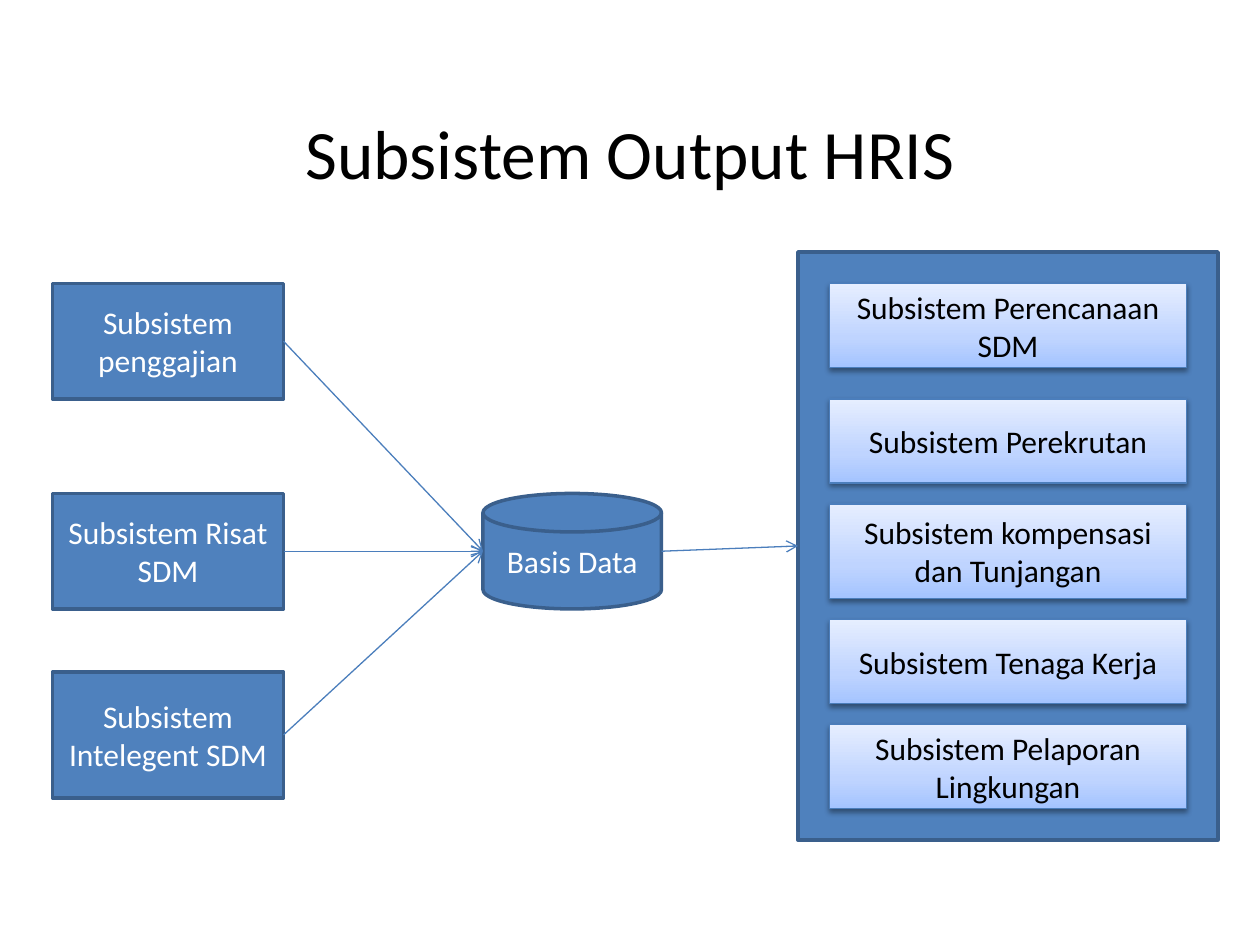
import pptx
import pptx.dml.color
import pptx.enum.dml
import pptx.enum.shapes
import pptx.enum.text
import pptx.oxml
import pptx.oxml.ns
import pptx.util
from lxml import etree

Pt = pptx.util.Pt
qn = pptx.oxml.ns.qn
SHAPES = pptx.enum.shapes.MSO_SHAPE

TITLE = "Subsistem Output HRIS"
FONT = "Calibri"
BLUE, DARK_BLUE, LINE_BLUE = "4F81BD", "3A5F8C", "4B7EBC"
WHITE, BLACK = "FFFFFF", "000000"
GRADIENT = [(0, "A4C4FF"), (35, "BFD4FF"), (100, "E6EEFF")]

# text, top, height
INPUTS = [
    ("Subsistem penggajian", 162, 66),
    ("Subsistem Risat SDM", 282, 66),
    ("Subsistem Intelegent SDM", 384, 72),
]
OUTPUTS = [
    ("Subsistem Perencanaan SDM", 162, 48),
    ("Subsistem Perekrutan", 228, 48),
    ("Subsistem kompensasi dan Tunjangan", 288, 54),
    ("Subsistem Tenaga Kerja", 354, 48),
    ("Subsistem Pelaporan Lingkungan", 414, 48),
]
INPUT_LEFT, INPUT_WIDTH = 30, 132
OUTPUT_LEFT, OUTPUT_WIDTH = 474, 204
DATABASE = (276, 282, 102, 66)
PANEL = (456, 144, 240, 336)


def color(value):
    return pptx.dml.color.RGBColor.from_string(value)


def write_text(shape, text, size, font_color):
    frame = shape.text_frame
    frame.text = text
    frame.word_wrap = True
    frame.auto_size = pptx.enum.text.MSO_AUTO_SIZE.NONE
    frame.vertical_anchor = pptx.enum.text.MSO_ANCHOR.MIDDLE
    paragraph = frame.paragraphs[0]
    paragraph.alignment = pptx.enum.text.PP_ALIGN.CENTER
    font = paragraph.runs[0].font
    font.name, font.size = FONT, Pt(size)
    font.color.rgb = color(font_color)


def add_box(slide, box, text="", kind=SHAPES.RECTANGLE, line=DARK_BLUE,
            line_width=2, font_color=WHITE):
    shape = slide.shapes.add_shape(kind, *map(Pt, box))
    shape.shadow.inherit = False
    shape.fill.solid()
    shape.fill.fore_color.rgb = color(BLUE)
    shape.line.color.rgb = color(line)
    shape.line.width = Pt(line_width)
    if text:
        write_text(shape, text, 18, font_color)
    return shape


def add_color_element(parent, value):
    return etree.SubElement(parent, qn("a:srgbClr"), val=value)


def add_gradient_and_shadow(shape):
    shape.fill.gradient()
    shape.fill.gradient_angle = 90
    properties = shape._element.spPr
    stops = properties.find(qn("a:gradFill")).find(qn("a:gsLst"))
    for stop in list(stops):
        stops.remove(stop)
    for position, value in GRADIENT:
        stop = etree.SubElement(stops, qn("a:gs"), pos=str(position * 1000))
        add_color_element(stop, value)
    shadow = etree.SubElement(
        properties.find(qn("a:effectLst")), qn("a:outerShdw"),
        blurRad=str(Pt(3.1)), dist=str(Pt(1.6)), dir="5400000", rotWithShape="0")
    etree.SubElement(add_color_element(shadow, BLACK), qn("a:alpha"), val="38000")


def add_arrow(slide, start, end):
    connector = slide.shapes.add_connector(
        pptx.enum.shapes.MSO_CONNECTOR.STRAIGHT, *map(Pt, start + end))
    connector.line.color.rgb = color(LINE_BLUE)
    connector.line.width = Pt(0.75)
    etree.SubElement(connector.line._get_or_add_ln(), qn("a:tailEnd"), type="arrow")
    etree.SubElement(connector._element.spPr, qn("a:effectLst"))


def left_middle(box):
    left, top, width, height = box
    return left, top + height / 2


def right_middle(box):
    left, top, width, height = box
    return left + width, top + height / 2


def main():
    presentation = pptx.Presentation()
    presentation.slide_width, presentation.slide_height = Pt(720), Pt(540)
    slide = presentation.slides.add_slide(presentation.slide_layouts[5])

    title = slide.shapes.title
    title.left, title.top, title.width, title.height = map(Pt, (36, 60, 648, 54))
    write_text(title, TITLE, 39.6, BLACK)

    input_boxes = [(INPUT_LEFT, top, INPUT_WIDTH, height) for _, top, height in INPUTS]
    for (text, _, _), box in zip(INPUTS, input_boxes):
        add_box(slide, box, text)
    add_box(slide, DATABASE, "Basis Data", SHAPES.FLOWCHART_MAGNETIC_DISK)
    add_box(slide, PANEL)
    for text, top, height in OUTPUTS:
        shape = add_box(slide, (OUTPUT_LEFT, top, OUTPUT_WIDTH, height), text,
                        line=LINE_BLUE, line_width=0.75, font_color=BLACK)
        add_gradient_and_shadow(shape)

    for box in input_boxes:
        add_arrow(slide, right_middle(box), left_middle(DATABASE))
    add_arrow(slide, right_middle(DATABASE), left_middle(PANEL))

    presentation.save("out.pptx")


if __name__ == "__main__":
    main()
